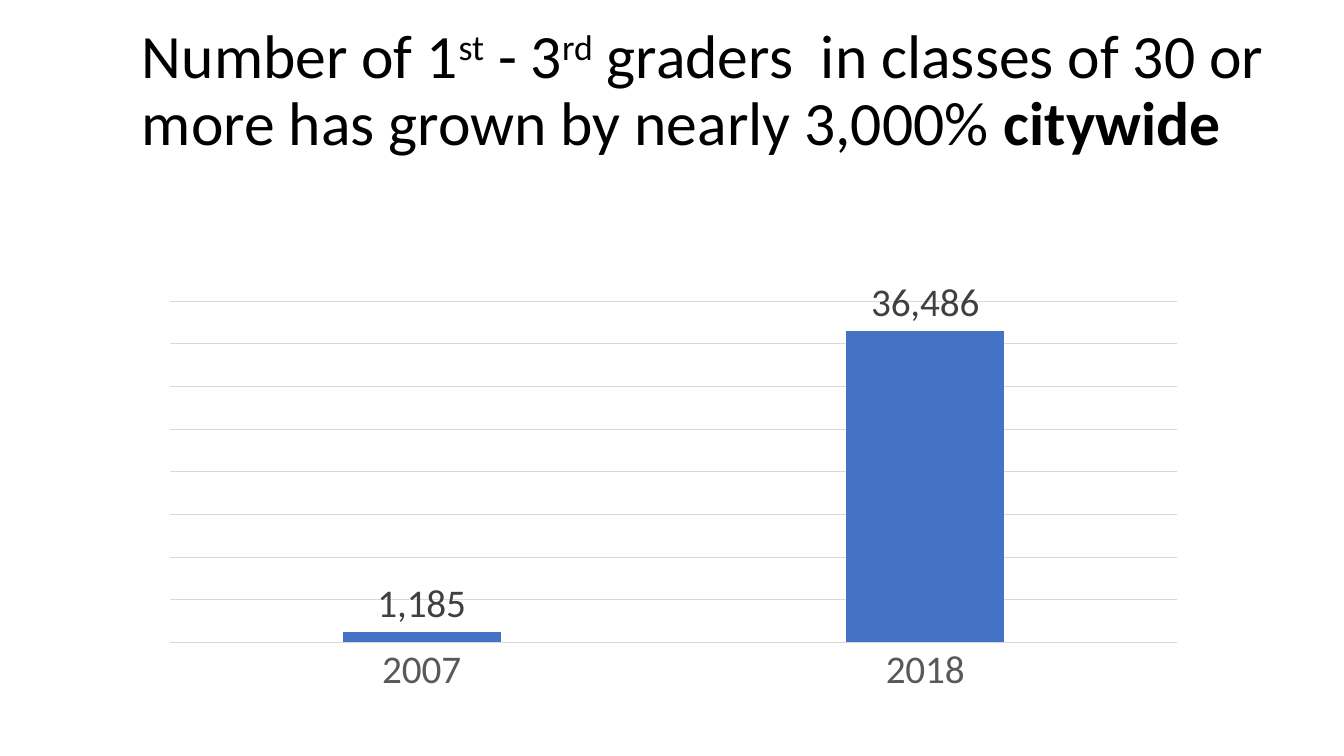
from lxml import etree
from pptx import Presentation
from pptx.chart.data import CategoryChartData
from pptx.dml.color import RGBColor
from pptx.enum.chart import XL_CHART_TYPE, XL_LABEL_POSITION, XL_TICK_MARK
from pptx.enum.text import MSO_ANCHOR
from pptx.oxml.ns import qn
from pptx.util import Inches, Pt

COLUMNS = XL_CHART_TYPE.COLUMN_CLUSTERED
OUTSIDE_END = XL_LABEL_POSITION.OUTSIDE_END
NO_TICK = XL_TICK_MARK.NONE
MIDDLE = MSO_ANCHOR.MIDDLE


class SlideBuilder:
    """Hold the style and the current slide, and add its elements."""

    font_name = "Calibri"
    colors = {"title": "000000", "bar": "4472C4", "label": "404040",
              "axis": "595959", "grid": "D9D9D9"}

    def __init__(self, slide):
        self.slide = slide

    def color(self, name):
        return RGBColor.from_string(self.colors[name])

    def style_font(self, font, size, color):
        font.name = self.font_name
        font.size = Pt(size)
        font.color.rgb = self.color(color)

    def style_line(self, line):
        line.color.rgb = self.color("grid")
        line.width = Pt(0.75)

    def add_title(self, box, runs):
        frame = self.slide.shapes.add_textbox(*map(Inches, box)).text_frame
        frame.word_wrap = True
        frame.vertical_anchor = MIDDLE
        paragraph = frame.paragraphs[0]
        paragraph.line_spacing = 0.9
        for text, style in runs:
            run = paragraph.add_run()
            run.text = text
            self.style_font(run.font, 44, "title")
            if style == "superscript":
                run.font._element.set("baseline", "30000")
            elif style == "bold":
                run.font.bold = True

    def add_column_chart(self, box, years, pupils, plot_box):
        data = CategoryChartData(number_format="#,##0")
        data.categories = years
        data.add_series("Series 1", pupils)
        chart = self.slide.shapes.add_chart(
            COLUMNS, *map(Inches, box), data).chart
        chart.has_title = False
        chart.has_legend = False
        self.style_font(chart.font, 10, "title")
        self.style_axes(chart)
        self.style_columns(chart.plots[0])
        self.place_plot(chart, plot_box)

    def style_axes(self, chart):
        year_axis = chart.category_axis
        year_axis.major_tick_mark = NO_TICK
        year_axis.minor_tick_mark = NO_TICK
        self.style_font(year_axis.tick_labels.font, 28, "axis")
        self.style_line(year_axis.format.line)
        pupil_axis = chart.value_axis
        pupil_axis.visible = False
        pupil_axis.minimum_scale = 0
        pupil_axis.maximum_scale = 40000
        pupil_axis.major_unit = 5000
        self.style_line(pupil_axis.major_gridlines.format.line)

    def style_columns(self, plot):
        plot.vary_by_categories = False
        plot.gap_width = 219
        plot.overlap = -27
        columns = plot.series[0]
        columns.format.fill.solid()
        columns.format.fill.fore_color.rgb = self.color("bar")
        labels = columns.data_labels
        labels.show_value = True
        labels.position = OUTSIDE_END
        labels.number_format = "#,##0"
        labels.number_format_is_linked = False
        self.style_font(labels.font, 28, "label")

    def place_plot(self, chart, plot_box):
        plot_area = chart._chartSpace.chart.plotArea
        for old_layout in plot_area.findall(qn("c:layout")):
            plot_area.remove(old_layout)
        layout = etree.Element(qn("c:layout"))
        manual = etree.SubElement(layout, qn("c:manualLayout"))
        settings = [("layoutTarget", "inner"), ("xMode", "edge"),
                    ("yMode", "edge"), *zip("xywh", plot_box)]
        for tag, value in settings:
            etree.SubElement(manual, qn(f"c:{tag}")).set("val", str(value))
        plot_area.insert(0, layout)


def main():
    deck = Presentation()
    deck.slide_width = Inches(13.33)
    deck.slide_height = Inches(7.5)
    builder = SlideBuilder(deck.slides.add_slide(deck.slide_layouts[6]))
    builder.add_title((1.31, 0.19, 11.5, 1.45), [
        ("Number of 1", None),
        ("st", "superscript"),
        (" - 3", None),
        ("rd", "superscript"),
        (" graders  in classes of 30 or more has grown by nearly 3,000% ", None),
        ("citywide", "bold"),
    ])
    builder.add_column_chart((1, 1.64, 10.87, 5.48), ["2007", "2018"],
                             [1185, 36486], (0.063, 0.246, 0.919, 0.618))
    deck.save("out.pptx")


if __name__ == "__main__":
    main()
